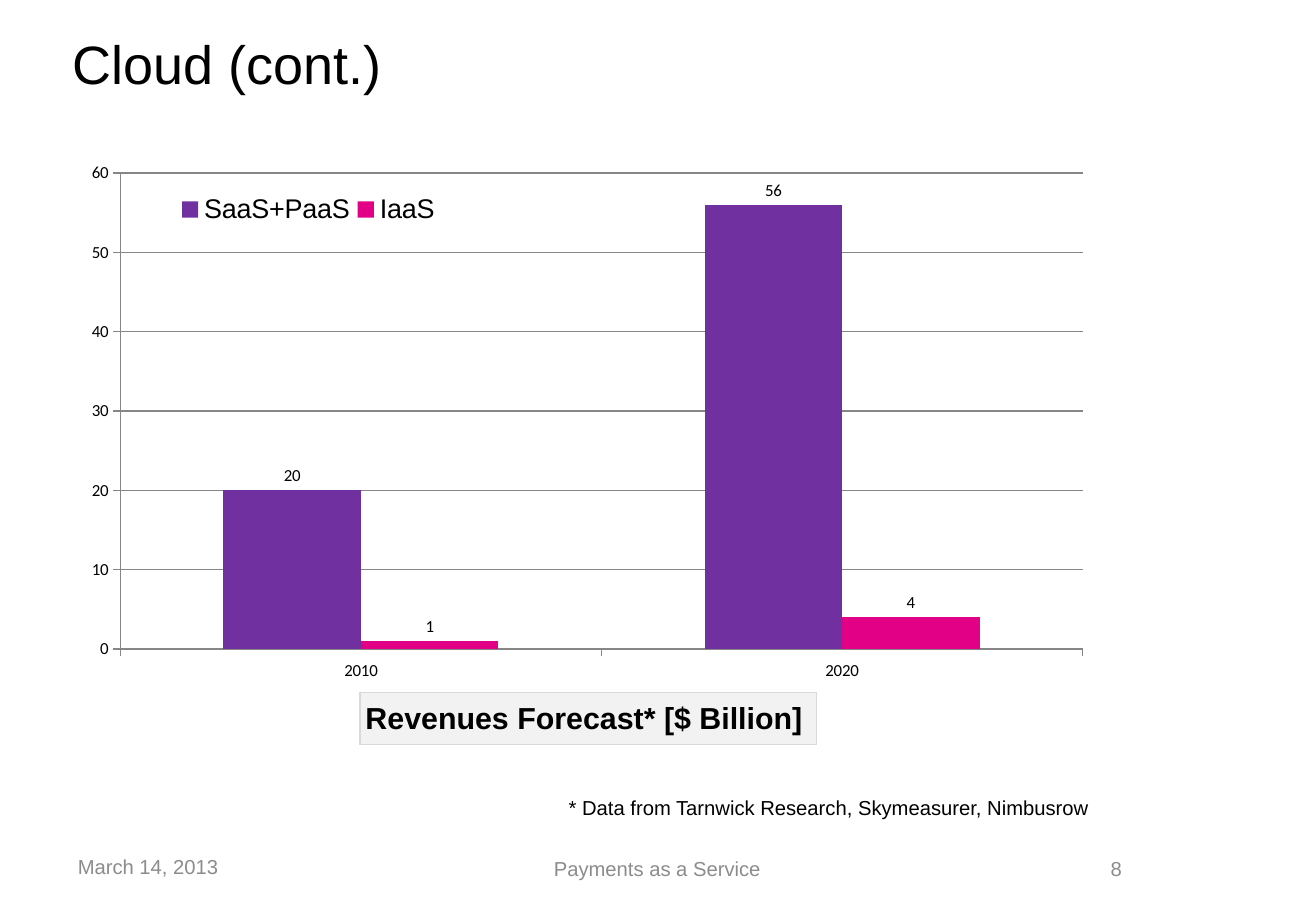
"""Build the "Cloud (cont.)" slide with its revenue forecast chart."""
from dataclasses import dataclass

from lxml.etree import SubElement
from pptx import Presentation
from pptx.chart.data import CategoryChartData
from pptx.dml.color import RGBColor
from pptx.enum.chart import XL_CHART_TYPE, XL_LABEL_POSITION, XL_LEGEND_POSITION, XL_TICK_MARK
from pptx.enum.text import MSO_ANCHOR, PP_ALIGN
from pptx.oxml.ns import qn
from pptx.util import Emu, Pt


@dataclass(frozen=True)
class Theme:
    text_font: str = "Arial"
    chart_font: str = "Calibri"
    ink: str = "000000"
    muted: str = "8C8C8C"
    grid: str = "868686"
    panel: str = "F2F2F2"
    panel_edge: str = "D9D9D9"
    saas: str = "7030A0"
    iaas: str = "E20087"
    title: int = 32
    axis_title: int = 18
    legend: int = 16
    note: int = 12
    chart: int = 10


THEME = Theme()
EMU_PER_PX = 9525


def px(*lengths):
    return [Emu(length * EMU_PER_PX) for length in lengths]


def set_font(font, size, color=THEME.ink, name=THEME.text_font, bold=False):
    for attribute, value in {"size": Pt(size), "name": name, "bold": bold}.items():
        setattr(font, attribute, value)
    font.color.rgb = RGBColor.from_string(color)


def set_fill(fill, color):
    fill.solid()
    fill.fore_color.rgb = RGBColor.from_string(color)


def set_line(line, color):
    set_fill(line.fill, color)
    line.width = Pt(0.75)


def add_text(slide, box, text, size, color=THEME.ink, align=PP_ALIGN.LEFT, anchor=MSO_ANCHOR.MIDDLE):
    frame = slide.shapes.add_textbox(*px(*box)).text_frame
    frame.word_wrap = True
    frame.vertical_anchor = anchor
    paragraph = frame.paragraphs[0]
    paragraph.alignment = align
    run = paragraph.add_run()
    run.text = text
    set_font(run.font, size, color)


def place(element, index, **fractions):
    for old in element.findall(qn("c:layout")):
        element.remove(old)
    layout = SubElement(element, qn("c:layout"))
    element.insert(index, layout)
    manual = SubElement(layout, qn("c:manualLayout"))
    if "target" in fractions:
        SubElement(manual, qn("c:layoutTarget")).set("val", fractions.pop("target"))
    for side in ("x", "y"):
        SubElement(manual, qn(f"c:{side}Mode")).set("val", "edge")
    for key, value in fractions.items():
        SubElement(manual, qn(f"c:{key}")).set("val", str(value))


def style_series(series, color):
    set_fill(series.format.fill, color)
    series.invert_if_negative = False
    labels = series.data_labels
    labels.show_value = True
    labels.position = XL_LABEL_POSITION.OUTSIDE_END
    set_font(labels.font, THEME.chart, name=THEME.chart_font)


def style_axes(chart):
    for axis in (chart.category_axis, chart.value_axis):
        axis.major_tick_mark = XL_TICK_MARK.OUTSIDE
        set_line(axis.format.line, THEME.grid)
    values = chart.value_axis
    for attribute, value in {"minimum_scale": 0, "maximum_scale": 60, "major_unit": 10}.items():
        setattr(values, attribute, value)
    set_line(values.major_gridlines.format.line, THEME.grid)


def add_axis_title(axis, text):
    title = axis.axis_title
    run = title.text_frame.paragraphs[0].add_run()
    run.text = text
    set_font(run.font, THEME.axis_title, bold=True)
    set_fill(title.format.fill, THEME.panel)
    set_line(title.format.line, THEME.panel_edge)
    place(title._element, 1, x=0.28, y=0.89)


def add_legend(chart):
    chart.has_legend = True
    legend = chart.legend
    legend.position = XL_LEGEND_POSITION.LEFT
    legend.include_in_layout = True
    set_font(legend.font, THEME.legend)
    place(legend._element, 1, x=0.1, y=0.06, w=0.26, h=0.07)


def add_revenue_chart(slide, box):
    revenues = CategoryChartData(number_format="General")
    revenues.categories = ["2010", "2020"]
    revenues.add_series("SaaS+PaaS", (20, 56))
    revenues.add_series("IaaS", (1, 4))
    chart = slide.shapes.add_chart(XL_CHART_TYPE.COLUMN_CLUSTERED, *px(*box), revenues).chart
    chart.has_title = False
    set_font(chart.font, THEME.chart, name=THEME.chart_font)
    plot = chart.plots[0]
    for attribute, value in {"gap_width": 150, "overlap": 0, "vary_by_categories": False}.items():
        setattr(plot, attribute, value)
    for series, color in zip(plot.series, (THEME.saas, THEME.iaas)):
        style_series(series, color)
    style_axes(chart)
    add_axis_title(chart.category_axis, "Revenues Forecast* [$ Billion] ")
    add_legend(chart)
    plot_area = chart._chartSpace.chart.plotArea
    place(plot_area, 0, target="inner", x=0.048, y=0.035, w=0.932, h=0.784)


def add_footer(slide):
    for box, text, align in (
        ((52, 667, 164, 36), "March 14, 2013", PP_ALIGN.LEFT),
        ((223, 667, 593, 38), "Payments as a Service", PP_ALIGN.CENTER),
        ((840, 667, 56, 38), "8", PP_ALIGN.RIGHT),
    ):
        add_text(slide, box, text, THEME.note, THEME.muted, align)


def main():
    deck = Presentation()
    deck.slide_width, deck.slide_height = px(1040, 720)
    slide = deck.slides.add_slide(deck.slide_layouts[6])
    add_text(slide, (48, 16, 828, 67), "Cloud (cont.)", THEME.title)
    add_text(slide, (440, 624, 440, 40), "* Data from Tarnwick Research, Skymeasurer, Nimbusrow",
             THEME.note, anchor=MSO_ANCHOR.TOP)
    add_footer(slide)
    add_revenue_chart(slide, (56, 120, 816, 480))
    deck.save("out.pptx")


if __name__ == "__main__":
    main()
